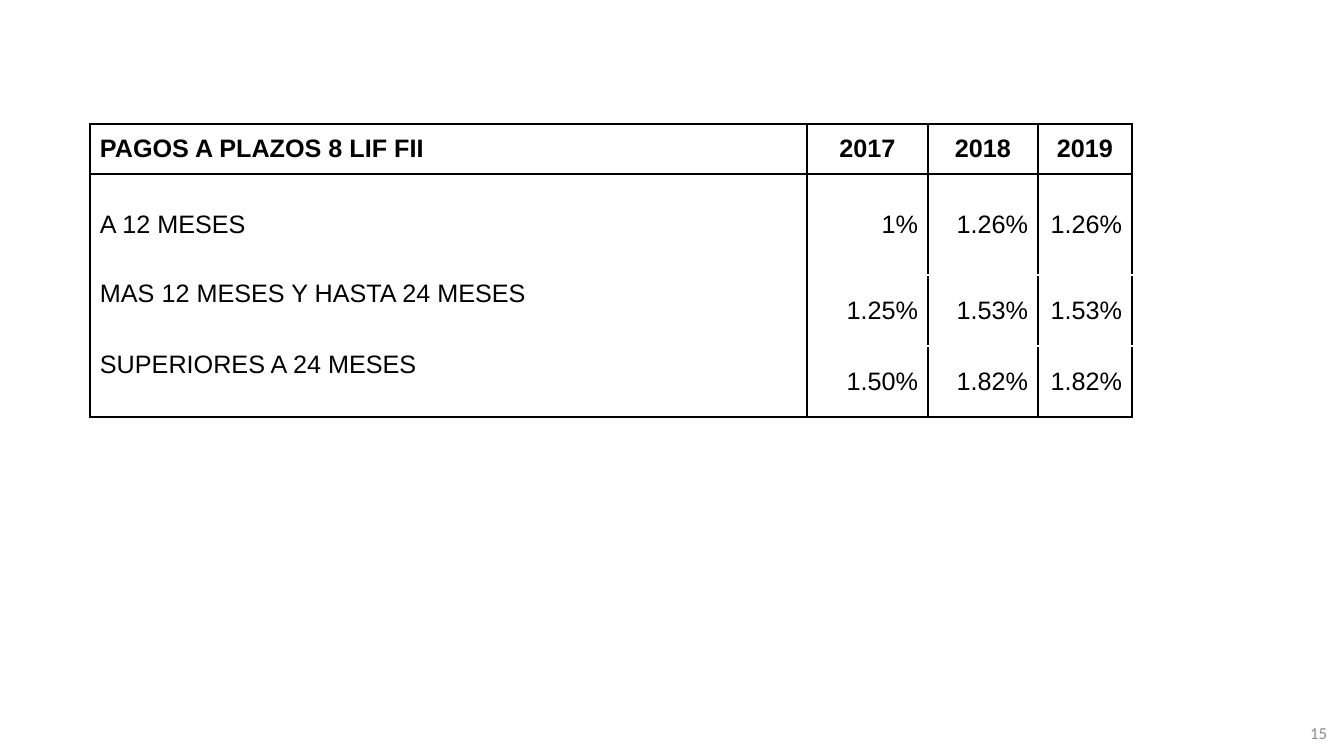
from lxml.etree import SubElement
from pptx import Presentation
from pptx.dml.color import RGBColor
from pptx.enum.text import MSO_ANCHOR, PP_ALIGN
from pptx.oxml.ns import qn
from pptx.util import Pt

EMU_PER_PX = 914400 / 100.8
BLACK = RGBColor(0x00, 0x00, 0x00)
WHITE = RGBColor(0xFF, 0xFF, 0xFF)
GRAY = RGBColor(0x8C, 0x8C, 0x8C)

COLUMN_WIDTHS = [717, 121, 110, 94]
ROW_HEIGHTS = [50, 101, 71, 71]
RATES = [
    ["PAGOS A PLAZOS 8 LIF FII", "2017", "2018", "2019"],
    ["A 12 MESES", "1%", "1.26%", "1.26%"],
    ["MAS 12 MESES Y HASTA 24 MESES", "1.25%", "1.53%", "1.53%"],
    ["SUPERIORES A 24 MESES", "1.50%", "1.82%", "1.82%"],
]


def px(length):
    return round(length * EMU_PER_PX)


def write(frame, text, *, size, font, color, bold=False, align=PP_ALIGN.LEFT):
    paragraph = frame.paragraphs[0]
    paragraph.alignment = align
    run = paragraph.add_run()
    run.text = text
    run.font.size = Pt(size)
    run.font.name = font
    run.font.bold = bold
    run.font.color.rgb = color


def set_border(cell, side, color):
    line = SubElement(cell._tc.get_or_add_tcPr(), qn(f"a:ln{side}"), w=str(Pt(1)))
    if color is None:
        SubElement(line, qn("a:noFill"))
    else:
        fill = SubElement(line, qn("a:solidFill"))
        SubElement(fill, qn("a:srgbClr"), val=str(color))


def rule_color(boundary, column):
    if boundary in (0, 1, len(RATES)):
        return BLACK
    return WHITE if column >= 2 else None


def add_rates(slide, left, top, width, height):
    rates = slide.shapes.add_table(
        len(RATES), len(COLUMN_WIDTHS), px(left), px(top), px(width), px(height)
    ).table
    rates.first_row = False
    rates.horz_banding = False
    for column, column_width in zip(rates.columns, COLUMN_WIDTHS):
        column.width = px(column_width)
    for row, row_height in zip(rates.rows, ROW_HEIGHTS):
        row.height = px(row_height)
    for r, texts in enumerate(RATES):
        for c, text in enumerate(texts):
            cell = rates.cell(r, c)
            heading = r == 0
            if c == 0:
                align = PP_ALIGN.LEFT
            else:
                align = PP_ALIGN.CENTER if heading else PP_ALIGN.RIGHT
            write(cell.text_frame, text, size=18, font="Arial", color=BLACK,
                  bold=heading, align=align)
            top_label = c == 0 and r >= 2
            cell.vertical_anchor = MSO_ANCHOR.TOP if top_label else MSO_ANCHOR.MIDDLE
            cell.margin_left = cell.margin_right = px(10)
            cell.margin_top = cell.margin_bottom = px(5)
            set_border(cell, "L", BLACK)
            set_border(cell, "R", BLACK)
            set_border(cell, "T", rule_color(r, c))
            set_border(cell, "B", rule_color(r + 1, c))
            cell.fill.solid()
            cell.fill.fore_color.rgb = WHITE


def add_page_number(slide, left, top, width, height):
    frame = slide.shapes.add_textbox(px(left), px(top), px(width), px(height)).text_frame
    frame.word_wrap = True
    frame.vertical_anchor = MSO_ANCHOR.MIDDLE
    write(frame, "15", size=12, font="Calibri", color=GRAY, align=PP_ALIGN.RIGHT)


def main():
    deck = Presentation()
    deck.slide_width = px(1344)
    deck.slide_height = px(756)
    slide = deck.slides.add_slide(deck.slide_layouts[6])
    add_rates(slide, 90, 124, sum(COLUMN_WIDTHS), sum(ROW_HEIGHTS))
    add_page_number(slide, 1024, 713, 313, 40)
    deck.save("out.pptx")


if __name__ == "__main__":
    main()
